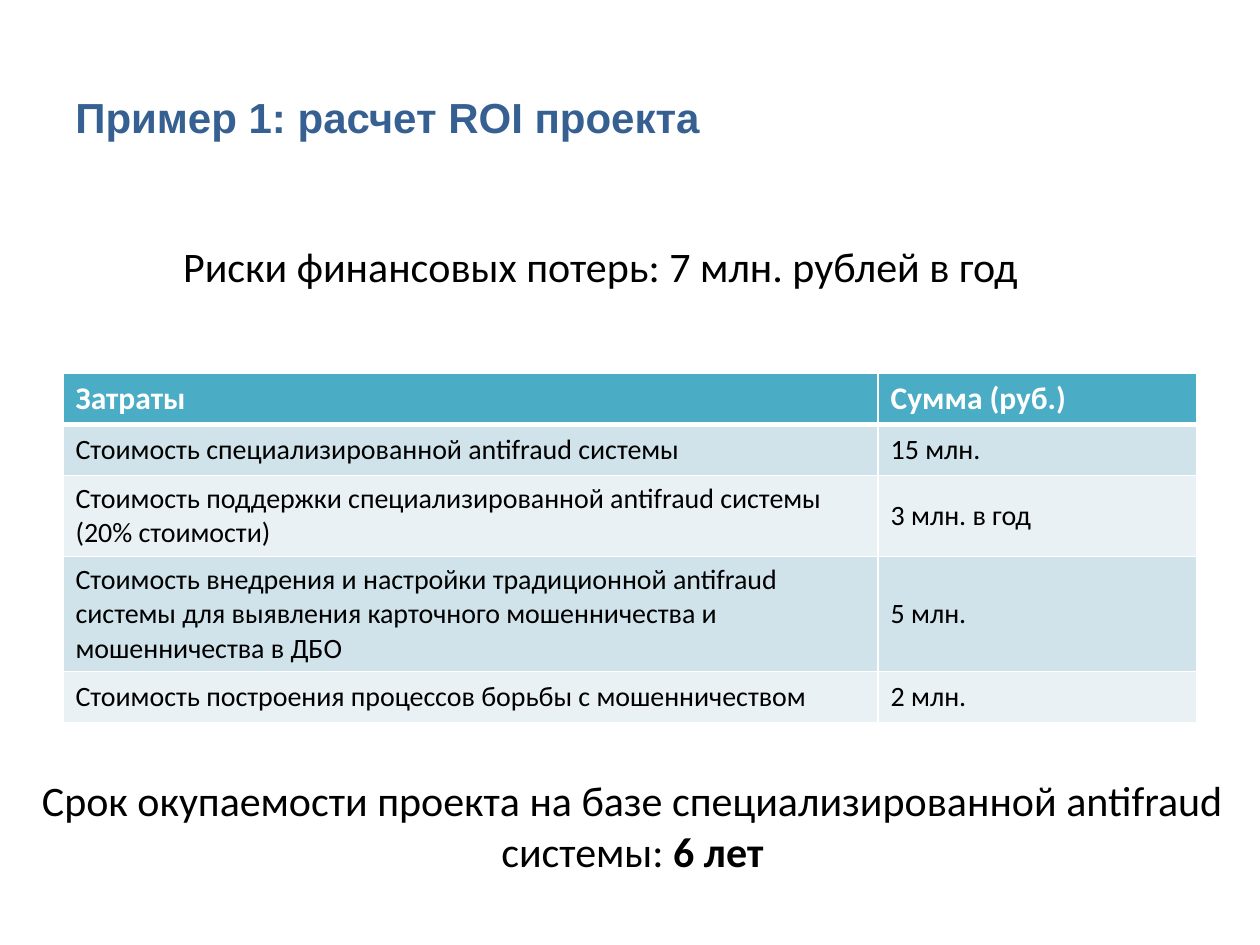
from lxml.etree import SubElement
from pptx import Presentation
from pptx.dml.color import RGBColor
from pptx.enum.text import MSO_ANCHOR, PP_ALIGN
from pptx.oxml.ns import qn
from pptx.util import Pt

TITLE_BLUE = RGBColor(0x37, 0x60, 0x92)
HEADER_TEAL = RGBColor(0x4B, 0xAC, 0xC6)
BAND_DARK = RGBColor(0xD0, 0xE3, 0xEA)
BAND_LIGHT = RGBColor(0xE9, 0xF1, 0xF5)
WHITE = RGBColor(0xFF, 0xFF, 0xFF)
BLACK = RGBColor(0, 0, 0)

COSTS = [
    ("Затраты", "Сумма (руб.)"),
    ("Стоимость специализированной antifraud системы", "15 млн."),
    ("Стоимость поддержки специализированной antifraud системы (20% стоимости)",
     "3 млн. в год"),
    ("Стоимость внедрения и настройки традиционной antifraud системы для "
     "выявления карточного мошенничества и мошенничества в ДБО", "5 млн."),
    ("Стоимость построения процессов борьбы с мошенничеством", "2 млн."),
]
COLUMN_WIDTHS = (465.8, 182.2)
ROW_HEIGHTS = (29.2, 29.2, 46.4, 65.6, 29.2)


def set_font(paragraph, size, color, name="Calibri", bold=None):
    font = paragraph.font
    font.name, font.size, font.bold = name, Pt(size), bold
    font.color.rgb = color


def add_text(slide, box, runs, color=BLACK, name="Calibri",
             align=PP_ALIGN.CENTER, anchor=MSO_ANCHOR.TOP):
    """Add a 24 pt text box; runs are (text, bold) pairs."""
    frame = slide.shapes.add_textbox(*map(Pt, box)).text_frame
    frame.word_wrap = True
    frame.vertical_anchor = anchor
    paragraph = frame.paragraphs[0]
    paragraph.alignment = align
    set_font(paragraph, 24, color, name)
    for text, bold in runs:
        run = paragraph.add_run()
        run.text = text
        run.font.bold = bold


def set_borders(cell, top, bottom):
    properties = cell._tc.get_or_add_tcPr()
    for side, width in (("L", 1), ("R", 1), ("T", top), ("B", bottom)):
        line = SubElement(properties, qn(f"a:ln{side}"), w=str(Pt(width)))
        fill = SubElement(line, qn("a:solidFill"))
        SubElement(fill, qn("a:srgbClr"), val=str(WHITE))


def fill_cell(cell, text, row):
    is_header = row == 0
    set_borders(cell, top=3 if row == 1 else 1, bottom=3 if is_header else 1)
    cell.fill.solid()
    cell.fill.fore_color.rgb = (
        HEADER_TEAL if is_header else BAND_DARK if row % 2 else BAND_LIGHT)
    cell.vertical_anchor = MSO_ANCHOR.MIDDLE
    cell.text = text
    set_font(cell.text_frame.paragraphs[0], 18 if is_header else 16,
             WHITE if is_header else BLACK, bold=is_header)


def add_cost_table(slide):
    table = slide.shapes.add_table(
        len(COSTS), len(COLUMN_WIDTHS), Pt(36), Pt(213.3),
        Pt(sum(COLUMN_WIDTHS)), Pt(sum(ROW_HEIGHTS))).table
    for column, width in zip(table.columns, COLUMN_WIDTHS):
        column.width = Pt(width)
    for row, (texts, height) in enumerate(zip(COSTS, ROW_HEIGHTS)):
        table.rows[row].height = Pt(height)
        for column, text in enumerate(texts):
            fill_cell(table.cell(row, column), text, row)


def main():
    presentation = Presentation()
    presentation.slide_width, presentation.slide_height = Pt(720), Pt(540)
    slide = presentation.slides.add_slide(presentation.slide_layouts[6])
    add_text(slide, (36, 21.6, 648, 90),
             [("Пример 1: расчет ROI проекта", True)], TITLE_BLUE, "Arial",
             PP_ALIGN.LEFT, MSO_ANCHOR.MIDDLE)
    add_cost_table(slide)
    add_text(slide, (59.8, 134, 566.6, 36),
             [("Риски финансовых потерь: 7 млн. рублей в год", False)])
    add_text(slide, (1.4, 439.2, 720, 65.5),
             [("Срок окупаемости проекта на базе специализированной "
               "antifraud системы: ", False), ("6 лет", True)])
    presentation.save("out.pptx")


if __name__ == "__main__":
    main()
